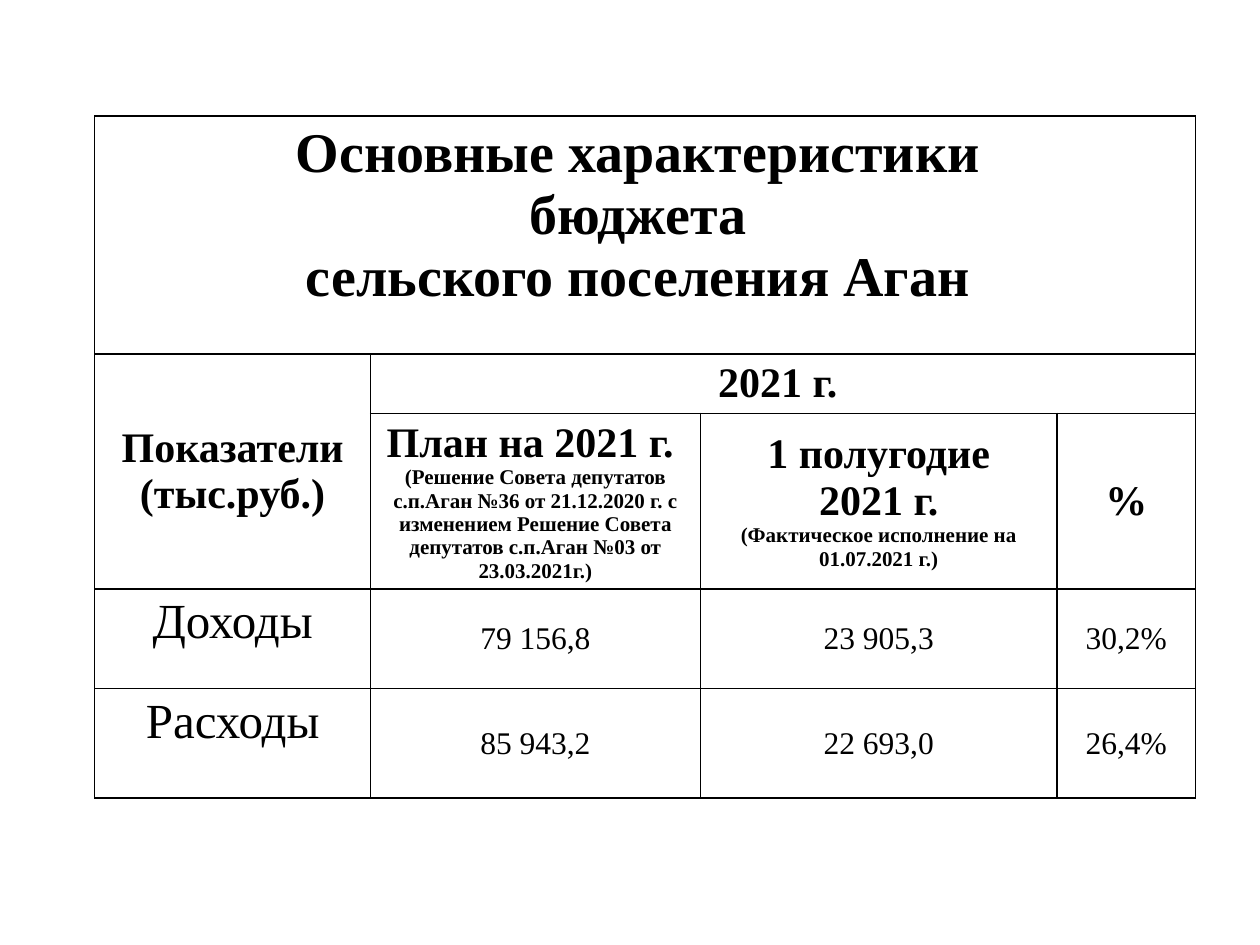
from lxml.etree import SubElement
from pptx import Presentation
from pptx.dml.color import RGBColor
from pptx.enum.text import MSO_ANCHOR as Anchor, PP_ALIGN as Align
from pptx.oxml.ns import qn
from pptx.util import Cm, Pt

INK = "000000"
FONT = "Times New Roman"


def color(hex_text):
    return RGBColor.from_string(hex_text)


def add_borders(cell):
    properties = cell._tc.get_or_add_tcPr()
    for side in ("lnL", "lnR", "lnT", "lnB"):
        line = SubElement(properties, qn(f"a:{side}"), w=str(Pt(1)))
        fill = SubElement(line, qn("a:solidFill"))
        SubElement(fill, qn("a:srgbClr"), val=INK)


deck = Presentation()
deck.slide_width, deck.slide_height = Cm(25.4), Cm(19.05)
page = deck.slides.add_slide(deck.slide_layouts[6])

column_widths = [5.56, 6.65, 7.19, 2.79]
row_heights = [4.8, 1.12, 3.45, 2.01, 2.21]
budget = page.shapes.add_table(
    len(row_heights), len(column_widths), Cm(1.91), Cm(2.34),
    Cm(sum(column_widths)), Cm(sum(row_heights))).table
budget.first_row = budget.horz_banding = False
for column, width in zip(budget.columns, column_widths):
    column.width = Cm(width)
for row, height in zip(budget.rows, row_heights):
    row.height = Cm(height)

for cell in budget.iter_cells():
    add_borders(cell)
    cell.fill.background()
    cell.vertical_anchor = Anchor.MIDDLE

# First and last cell of each merged area
for first, last in [((0, 0), (0, 3)), ((1, 0), (2, 0)), ((1, 1), (1, 3))]:
    budget.cell(*first).merge(budget.cell(*last))

# Each cell holds paragraphs of (text, size, bold)
contents = {
    (0, 0): [("Основные характеристики ", 32, True),
             ("бюджета ", 32, True),
             ("сельского поселения Аган ", 32, True)],
    (1, 0): [("Показатели (тыс.руб.)", 24, True)],
    (1, 1): [("2021 г. ", 24, True)],
    (2, 1): [("План на 2021 г. ", 24, True),
             ("(Решение Совета депутатов с.п.Аган №36 от 21.12.2020 г. "
              "с изменением Решение Совета депутатов с.п.Аган №03 "
              "от 23.03.2021г.)", 12, True)],
    (2, 2): [("1 полугодие", 24, True),
             (" 2021 г. ", 24, True),
             ("(Фактическое исполнение на 01.07.2021 г.)", 12, True)],
    (2, 3): [("%", 24, True)],
}
figures = [
    ("Доходы", "79 156,8", "23 905,3", "30,2%"),
    ("Расходы", "85 943,2", "22 693,0", "26,4%"),
]
for row, (label, *values) in enumerate(figures, start=3):
    contents[row, 0] = [(label, 28, False)]
    for column, value in enumerate(values, start=1):
        contents[row, column] = [(value, 18, False)]

for position, lines in contents.items():
    frame = budget.cell(*position).text_frame
    frame.text = "\n".join(text for text, size, bold in lines)
    for para, (text, size, bold) in zip(frame.paragraphs, lines):
        para.alignment = Align.CENTER
        for span in para.runs:
            span.font.name = FONT
            span.font.size = Pt(size)
            span.font.bold = bold
            span.font.color.rgb = color(INK)

for row in (0, 3, 4):
    budget.cell(row, 0).vertical_anchor = Anchor.TOP

deck.save("out.pptx")
